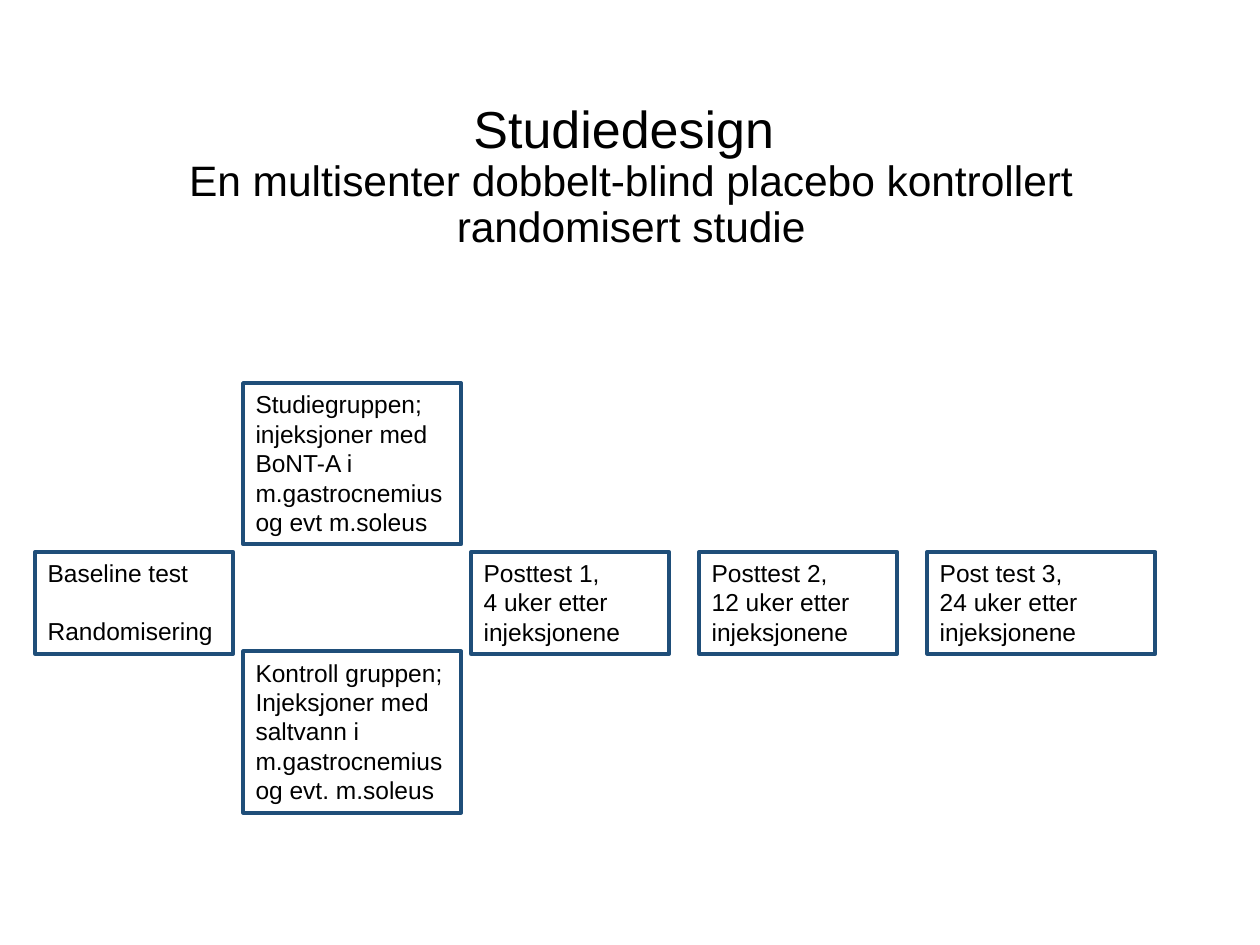
"""Build the study design slide: title and a flow of six boxes."""
from pptx import Presentation
from pptx.dml.color import RGBColor
from pptx.enum.shapes import MSO_SHAPE
from pptx.enum.text import MSO_ANCHOR, MSO_AUTO_SIZE, PP_ALIGN
from pptx.util import Inches, Pt

RECT = MSO_SHAPE.RECTANGLE
TOP, BOTTOM = MSO_ANCHOR.TOP, MSO_ANCHOR.BOTTOM
NO_FIT, GROW = MSO_AUTO_SIZE.NONE, MSO_AUTO_SIZE.SHAPE_TO_FIT_TEXT
LEFT, CENTER = PP_ALIGN.LEFT, PP_ALIGN.CENTER

BLACK, WHITE, BLUE = "000000", "FFFFFF", "1F4E79"
TITLE = ["Studiedesign ",
         "En multisenter dobbelt-blind placebo kontrollert randomisert studie"]
TITLE_SIZES = [29.7, 24.3]

# column, row, width, space between paragraphs, paragraphs
BOXES = [
    (0, "tests", 1.57, 16.1, ["Baseline test", "Randomisering"]),
    (1, "study", 1.73, 0,
     ["Studiegruppen; injeksjoner med BoNT-A i m.gastrocnemius og evt m.soleus"]),
    (1, "control", 1.73, 0,
     ["Kontroll gruppen;",
      "Injeksjoner med saltvann i m.gastrocnemius og evt. m.soleus"]),
    (2, "tests", 1.57, 0, ["Posttest 1,", "4 uker etter injeksjonene"]),
    (3, "tests", 1.57, 0, ["Posttest 2,", "12 uker etter injeksjonene"]),
    (4, "tests", 1.81, 0, ["Post test 3,", "24 uker etter", "injeksjonene"]),
]
ROWS = {"study": (3.04, 1.28), "tests": (4.38, 0.81), "control": (5.17, 1.28)}
BASELINE_LEFT, FIRST_LEFT, STEP = 0.28, 1.93, 1.81


def rgb(value):
    """Turn a hex string into a colour."""
    return RGBColor.from_string(value)


def write(tf, lines, sizes, align=LEFT, anchor=TOP, fit=GROW, spacing=1.0, gap=0):
    """Fill a text frame with one formatted paragraph per line."""
    tf.word_wrap, tf.auto_size, tf.vertical_anchor = True, fit, anchor
    for i, (line, size) in enumerate(zip(lines, sizes)):
        p = tf.paragraphs[0] if i == 0 else tf.add_paragraph()
        p.alignment, p.line_spacing = align, spacing
        p.space_before = Pt(gap if i else 0)
        r = p.add_run()
        r.text = line
        r.font.name, r.font.size = "Arial", Pt(size)
        r.font.color.rgb = rgb(BLACK)


def add_title(s):
    """Place the title so that its text ends at the lower edge."""
    sp = s.shapes.title
    sp.left, sp.top, sp.width, sp.height = map(Inches, (0.51, 0, 9, 2.02))
    sp.text_frame.margin_bottom = Inches(0.02)
    write(sp.text_frame, TITLE, TITLE_SIZES, align=CENTER, anchor=BOTTOM,
          fit=NO_FIT, spacing=0.9)


def add_box(s, column, row, width, gap, lines):
    """Draw one outlined box of the flow."""
    left = FIRST_LEFT + (column - 1) * STEP if column else BASELINE_LEFT
    top, height = ROWS[row]
    sp = s.shapes.add_shape(RECT, *map(Inches, (left, top, width, height)))
    sp.shadow.inherit = False
    sp.fill.solid()
    sp.fill.fore_color.rgb = rgb(WHITE)
    sp.line.color.rgb = rgb(BLUE)
    sp.line.width = Pt(2.25)
    write(sp.text_frame, lines, [14] * len(lines), gap=gap)


def main():
    """Build and save the slide."""
    prs = Presentation()
    prs.slide_width, prs.slide_height = Inches(10), Inches(7.5)
    s = prs.slides.add_slide(prs.slide_layouts[5])
    add_title(s)
    for box in BOXES:
        add_box(s, *box)
    prs.save("out.pptx")


if __name__ == "__main__":
    main()
